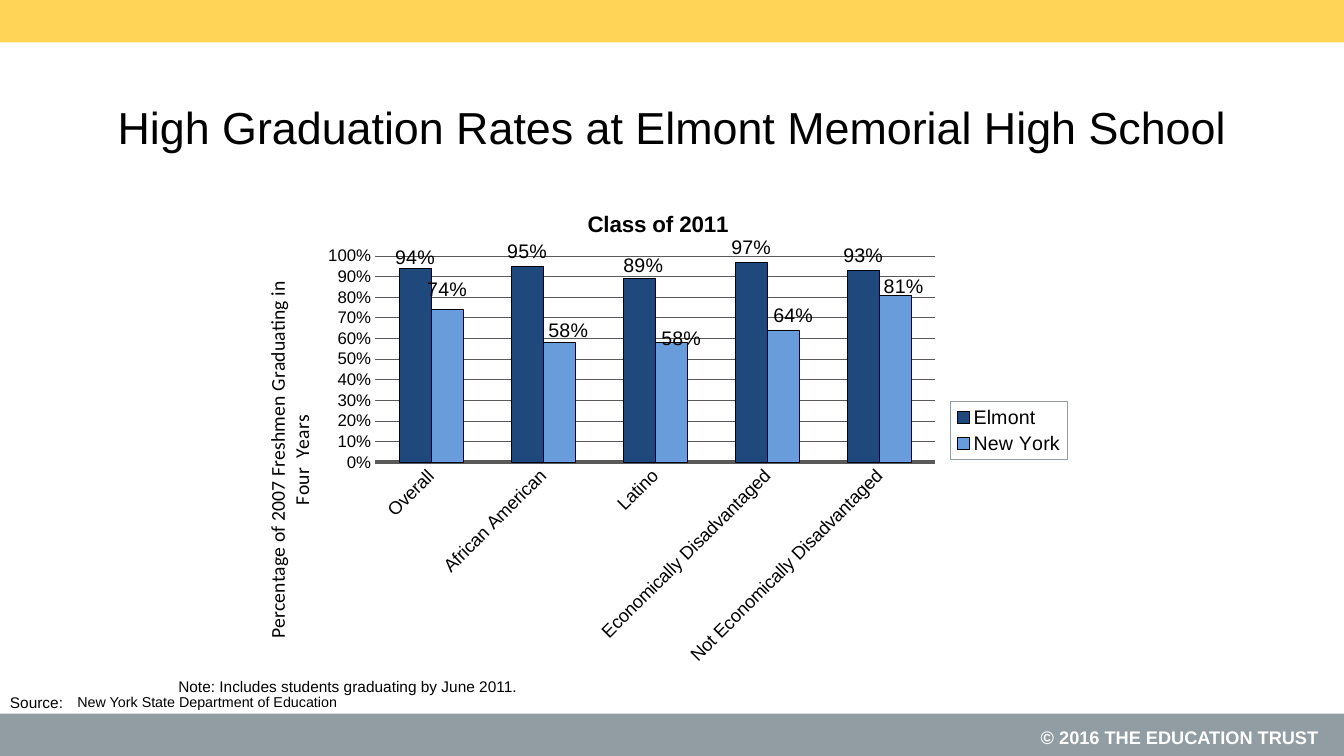
from dataclasses import dataclass

from lxml import etree
from pptx import Presentation
from pptx.chart import data as chart_data
from pptx.dml.color import RGBColor
from pptx.enum import chart as charts, shapes, text
from pptx.oxml.ns import qn
from pptx.util import Inches, Pt


@dataclass(frozen=True)
class Theme:
    font: str = "Arial"
    axis_title_font: str = "+mn-lt"
    black: str = "000000"
    white: str = "FFFFFF"
    yellow: str = "FFD457"
    gray: str = "919CA3"
    rule: str = "595959"
    navy: str = "1F497D"
    sky: str = "689CDA"
    headline: float = 32
    chart_title: float = 16
    label: float = 14
    footer: float = 13
    tick: float = 12
    note: float = 11
    source: float = 10.2


THEME = Theme()
GROUPS = ["Overall", "African American", "Latino",
          "Economically Disadvantaged", "Not Economically Disadvantaged"]
# Name, colour, values, and label shifts as fractions of the chart's size
SCHOOLS = [
    ("Elmont", THEME.navy, [0.94, 0.95, 0.89, 0.97, 0.93],
     {0: (0, 0.008), 2: (0.005, 0.004)}),
    ("New York", THEME.sky, [0.74, 0.58, 0.58, 0.64, 0.81],
     {0: (0, -0.01), 1: (0.011, 0.006), 2: (0.012, 0.022),
      3: (0.012, 0), 4: (0.01, 0.014)}),
]


def color(value):
    return RGBColor.from_string(value)


def style_font(font, size, ink=THEME.black, bold=False, name=THEME.font):
    font.name, font.size, font.bold = name, Pt(size), bold
    font.color.rgb = color(ink)


def style_line(line, ink, width=0.75):
    line.color.rgb = color(ink)
    line.width = Pt(width)


def add_band(page, top):
    band = page.shapes.add_shape(shapes.MSO_SHAPE.RECTANGLE, 0, Inches(top),
                                 Inches(13.33), Inches(0.42))
    band.shadow.inherit = False
    band.line.fill.background()
    band.fill.solid()
    return band


def add_text(page, words, left, top, width, height, size, ink=THEME.black,
             bold=False, align=text.PP_ALIGN.LEFT, anchor=text.MSO_ANCHOR.TOP,
             spacing=None):
    box = page.shapes.add_textbox(Inches(left), Inches(top),
                                  Inches(width), Inches(height))
    frame = box.text_frame
    frame.word_wrap = True
    frame.vertical_anchor = anchor
    para = frame.paragraphs[0]
    para.alignment = align
    para.line_spacing = spacing
    span = para.add_run()
    span.text = words
    style_font(span.font, size, ink, bold)


def make_layout(inner=False, **places):
    """Return a manual chart layout with x, y, w and h as fractions."""
    layout = etree.Element(qn("c:layout"))
    manual = etree.SubElement(layout, qn("c:manualLayout"))
    if inner:
        etree.SubElement(manual, qn("c:layoutTarget"), val="inner")
    if not inner and "edge" not in places:
        pass
    edge = places.pop("edge", True)
    if edge:
        for mode in ("xMode", "yMode"):
            etree.SubElement(manual, qn(f"c:{mode}"), val="edge")
    for key, value in places.items():
        etree.SubElement(manual, qn(f"c:{key}"), val=str(value))
    return layout


def place(element, after, layout):
    """Put a layout in a chart element, behind the named child if any."""
    for old in element.findall(qn("c:layout")):
        element.remove(old)
    before = element.find(qn(after)) if after else None
    if before is None:
        element.insert(0, layout)
    else:
        before.addnext(layout)


def set_title(owner, words, size, bold, font, x, y):
    """Title a chart or an axis at a fixed place."""
    title = owner.chart_title if hasattr(owner, "chart_title") else owner.axis_title
    para = title.text_frame.paragraphs[0]
    span = para.add_run()
    span.text = words
    style_font(span.font, size, bold=bold, name=font)
    element = para._p.getparent().getparent().getparent()
    place(element, "c:tx", make_layout(x=x, y=y))


def style_series(series, fill, shifts):
    series.format.fill.solid()
    series.format.fill.fore_color.rgb = color(fill)
    style_line(series.format.line, THEME.black)
    labels = series.data_labels
    labels.show_value = True
    labels.number_format = "0%"
    labels.number_format_is_linked = False
    labels.position = charts.XL_LABEL_POSITION.OUTSIDE_END
    style_font(labels.font, THEME.label)
    for index, (x, y) in shifts.items():
        label = series.points[index].data_label
        style_font(label.font, THEME.label)
        label.position = charts.XL_LABEL_POSITION.OUTSIDE_END
    for element in series._element.iter(qn("c:dLbl")):
        x, y = shifts[int(element.find(qn("c:idx")).get("val"))]
        place(element, "c:idx", make_layout(edge=False, x=x, y=y))


def style_axes(chart):
    groups, rates = chart.category_axis, chart.value_axis
    for axis, size in ((groups, THEME.footer), (rates, THEME.tick)):
        axis.major_tick_mark = axis.minor_tick_mark = charts.XL_TICK_MARK.NONE
        style_font(axis.tick_labels.font, size)
    style_line(groups.format.line, THEME.rule, 2.5)
    groups._element.find(qn("c:txPr")).find(qn("a:bodyPr")).set("rot", "-2700000")
    rates.format.line.fill.background()
    rates.minimum_scale, rates.maximum_scale, rates.major_unit = 0, 1, 0.1
    rates.tick_labels.number_format = "0%"
    rates.tick_labels.number_format_is_linked = False
    style_line(rates.major_gridlines.format.line, THEME.rule)
    set_title(rates, "Percentage of 2007 Freshmen Graduating in Four  Years",
              THEME.label, False, THEME.axis_title_font, 0.03, 0.19)
    body = rates.axis_title.text_frame._txBody.find(qn("a:bodyPr"))
    body.set("rot", "-5400000")
    body.set("vert", "horz")


def style_legend(chart):
    chart.has_legend = True
    legend = chart.legend
    legend.position = charts.XL_LEGEND_POSITION.RIGHT
    legend.include_in_layout = False
    style_font(legend.font, THEME.label)
    place(legend._element, "c:legendPos",
          make_layout(x=0.852, y=0.443, w=0.139, h=0.117))
    border = etree.Element(qn("c:spPr"))
    line = etree.SubElement(border, qn("a:ln"), w=str(Pt(0.75)))
    fill = etree.SubElement(line, qn("a:solidFill"))
    etree.SubElement(fill, qn("a:srgbClr"), val=THEME.gray)
    legend._element.find(qn("c:txPr")).addprevious(border)


def add_graduation_chart(page):
    rates = chart_data.CategoryChartData(number_format="0%")
    rates.categories = GROUPS
    for name, _, values, _ in SCHOOLS:
        rates.add_series(name, values)
    chart = page.shapes.add_chart(
        charts.XL_CHART_TYPE.COLUMN_CLUSTERED, Inches(2.33), Inches(1.83),
        Inches(8.33), Inches(4.87), rates).chart
    style_font(chart.font, THEME.label)
    set_title(chart, "Class of 2011", THEME.chart_title, True, THEME.font, 0.415, 0.043)
    plot = chart.plots[0]
    plot.gap_width, plot.overlap, plot.vary_by_categories = 150, 0, False
    for series, (_, fill, _, shifts) in zip(plot.series, SCHOOLS):
        style_series(series, fill, shifts)
    style_axes(chart)
    style_legend(chart)
    area = chart._chartSpace.find(qn("c:chart")).find(qn("c:plotArea"))
    place(area, None, make_layout(inner=True, x=0.167, y=0.146, w=0.667, h=0.42))


def main():
    deck = Presentation()
    deck.slide_width, deck.slide_height = Inches(13.33), Inches(7.5)
    page = deck.slides.add_slide(deck.slide_layouts[6])
    for top, fill in ((7.08, THEME.gray), (0, THEME.yellow)):
        add_band(page, top).fill.fore_color.rgb = color(fill)
    add_text(page, "© 2016 THE EDUCATION TRUST", 9.06, 7.15, 4.11, 0.32,
             THEME.footer, THEME.white, bold=True,
             align=text.PP_ALIGN.RIGHT, spacing=Pt(16))
    add_text(page, "High Graduation Rates at Elmont Memorial High School",
             0.67, 0.67, 12, 1.17, THEME.headline,
             align=text.PP_ALIGN.CENTER, anchor=text.MSO_ANCHOR.MIDDLE)
    add_graduation_chart(page)
    add_text(page, "Source:", 0, 6.83, 0.89, 0.29, THEME.note)
    add_text(page, "New York State Department of Education",
             0.67, 6.83, 12.66, 0.25, THEME.source)
    add_text(page, "Note: Includes students graduating by June 2011.",
             1.67, 6.67, 9.5, 0.25, THEME.note)
    deck.save("out.pptx")


if __name__ == "__main__":
    main()
